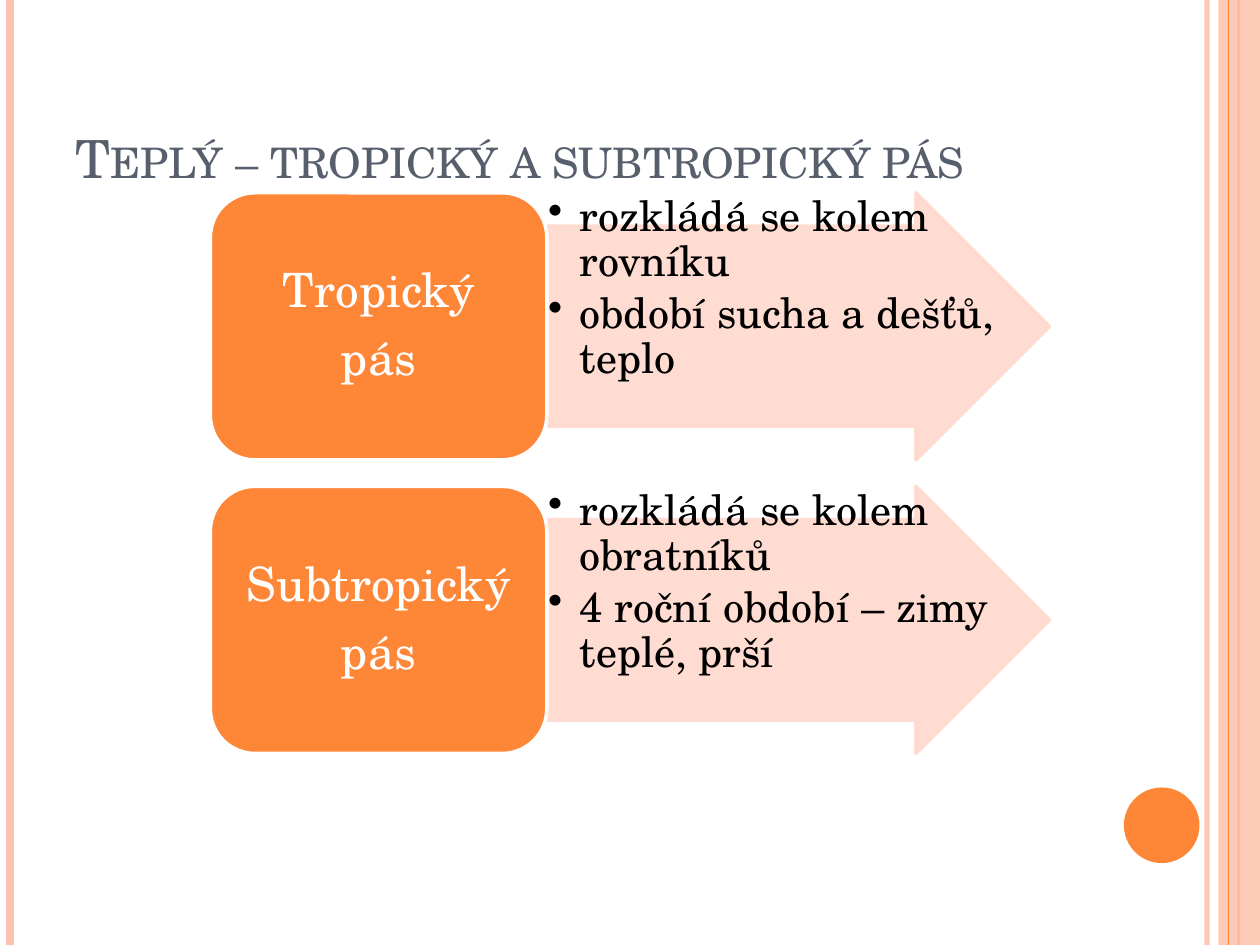
"""Build a slide comparing the tropical and subtropical climate belts."""
from lxml.etree import SubElement
from pptx import Presentation
from pptx.dml.color import RGBColor
from pptx.enum.shapes import MSO_CONNECTOR, MSO_SHAPE
from pptx.enum.text import MSO_ANCHOR, MSO_AUTO_SIZE, PP_ALIGN
from pptx.oxml.ns import qn
from pptx.util import Inches, Pt


def paint(color_format, hex_color, opacity=100):
    color_format.rgb = RGBColor.from_string(hex_color)
    if opacity < 100:
        for clr in color_format._xFill.iter(qn("a:srgbClr")):
            SubElement(clr, qn("a:alpha"), val=str(opacity * 1000))


def write(frame, lines, size, color, inset, **paragraph_format):
    frame.word_wrap = True
    frame.margin_left = frame.margin_right = Inches(inset[0])
    frame.margin_top = frame.margin_bottom = Inches(inset[1])
    for i, line in enumerate(lines):
        paragraph = frame.add_paragraph() if i else frame.paragraphs[0]
        for name, value in paragraph_format.items():
            setattr(paragraph, name, value)
        run = paragraph.add_run()
        run.text = line
        run.font.name = "TeX Gyre Schola"
        run.font.size = Pt(size)
        paint(run.font.color, color)


ORANGE, PEACH, PALE, SLATE = "FE8637", "FEC3AE", "FFD9CE", "575F6D"

presentation = Presentation()
presentation.slide_width, presentation.slide_height = Inches(10), Inches(7.5)
slide = presentation.slides.add_slide(presentation.slide_layouts[5])
shapes = slide.shapes

decor = [
    ("stripe", 9.58, PEACH, 3, 93),
    ("stripe", 0.08, PEACH, 4.5, 100),
    ("stripe", 9.83, ORANGE, 1.5, 100),
    ("band", 9.67, PEACH, 0, 87),
    ("stripe", 9.75, ORANGE, 0.75, 100),
]
for kind, x, color, width, opacity in decor:
    if kind == "stripe":
        stripe = shapes.add_connector(
            MSO_CONNECTOR.STRAIGHT, Inches(x), 0, Inches(x), Inches(7.5))
        stripe.line.width = Pt(width)
        stripe.line.fill.solid()
        target = stripe.line.fill
        SubElement(stripe._element.spPr, qn("a:effectLst"))
    else:
        band = shapes.add_shape(
            MSO_SHAPE.RECTANGLE, Inches(x), 0, Inches(0.33), Inches(7.5))
        band.shadow.inherit = False
        band.line.fill.background()
        band.fill.solid()
        target = band.fill
    paint(target.fore_color, color, opacity)

dot = shapes.add_shape(
    MSO_SHAPE.OVAL, Inches(8.92), Inches(6.25), Inches(0.6), Inches(0.6))
dot.shadow.inherit = False
dot.fill.solid()
paint(dot.fill.fore_color, ORANGE)
dot.line.fill.background()

title = shapes.title
title.left, title.top = Inches(0.5), Inches(0.3)
title.width, title.height = Inches(8.17), Inches(1.25)
title.text_frame.auto_size = MSO_AUTO_SIZE.NONE
title.text_frame.vertical_anchor = MSO_ANCHOR.BOTTOM
write(title.text_frame, ["Teplý – tropický a subtropický pás"], 30, SLATE,
      (0.1, 0.05), alignment=PP_ALIGN.LEFT)
title.text_frame.paragraphs[0].runs[0].font._element.set("cap", "small")

belts = [
    (["Tropický", "pás"],
     ["rozkládá se kolem rovníku", "období sucha a dešťů, teplo"]),
    (["Subtropický", "pás"],
     ["rozkládá se kolem obratníků", "4 roční období – zimy teplé, prší"]),
]
for row, (belt_name, facts) in enumerate(belts):
    top, height = Inches(1.53 + row * 2.33), Inches(2.12)
    arrow_area = Inches(4.33), top, Inches(4), height

    arrow = shapes.add_shape(MSO_SHAPE.RIGHT_ARROW, *arrow_area)
    arrow.adjustments[0], arrow.adjustments[1] = 0.75, 0.5
    label = shapes.add_shape(
        MSO_SHAPE.ROUNDED_RECTANGLE, Inches(1.67), top, Inches(2.67), height)
    for shape, fill, line, opacity in (
            (arrow, PALE, PALE, 90), (label, ORANGE, "FFFFFF", 100)):
        shape.shadow.inherit = False
        shape.fill.solid()
        paint(shape.fill.fore_color, fill, opacity)
        shape.line.width = Pt(2)
        shape.line.fill.solid()
        paint(shape.line.fill.fore_color, line, opacity)

    label.text_frame.vertical_anchor = MSO_ANCHOR.MIDDLE
    write(label.text_frame, belt_name, 27, "FFFFFF", (0.11, 0.06),
          alignment=PP_ALIGN.CENTER, line_spacing=0.9, space_after=Pt(9.45))

    fact_list = shapes.add_textbox(*arrow_area).text_frame
    write(fact_list, facts, 24, "000000", (0.02, 0.02),
          level=1, line_spacing=0.9, space_after=Pt(3.6))
    for paragraph in fact_list.paragraphs:
        properties = paragraph._p.get_or_add_pPr()
        properties.set("marL", str(Inches(0.25)))
        properties.set("indent", str(-Inches(0.25)))
        SubElement(properties, qn("a:buChar"), char="•")

presentation.save("out.pptx")
